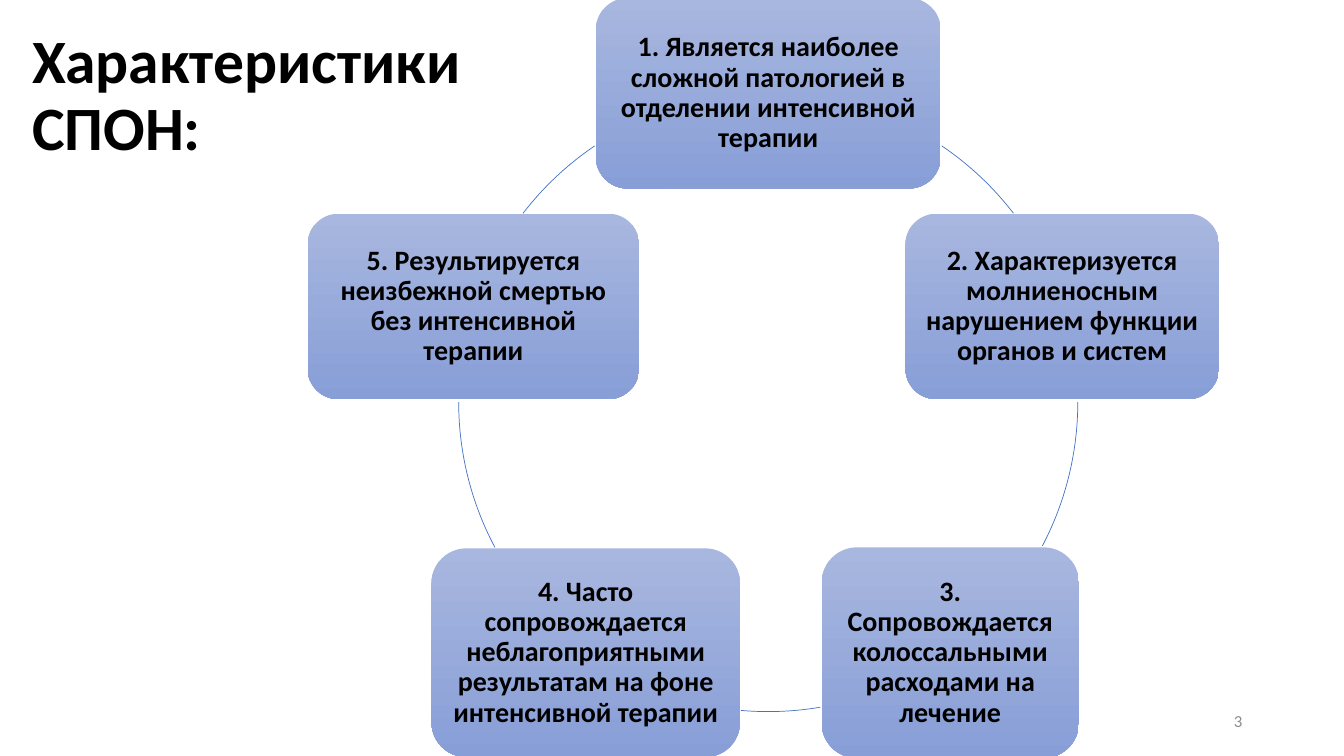
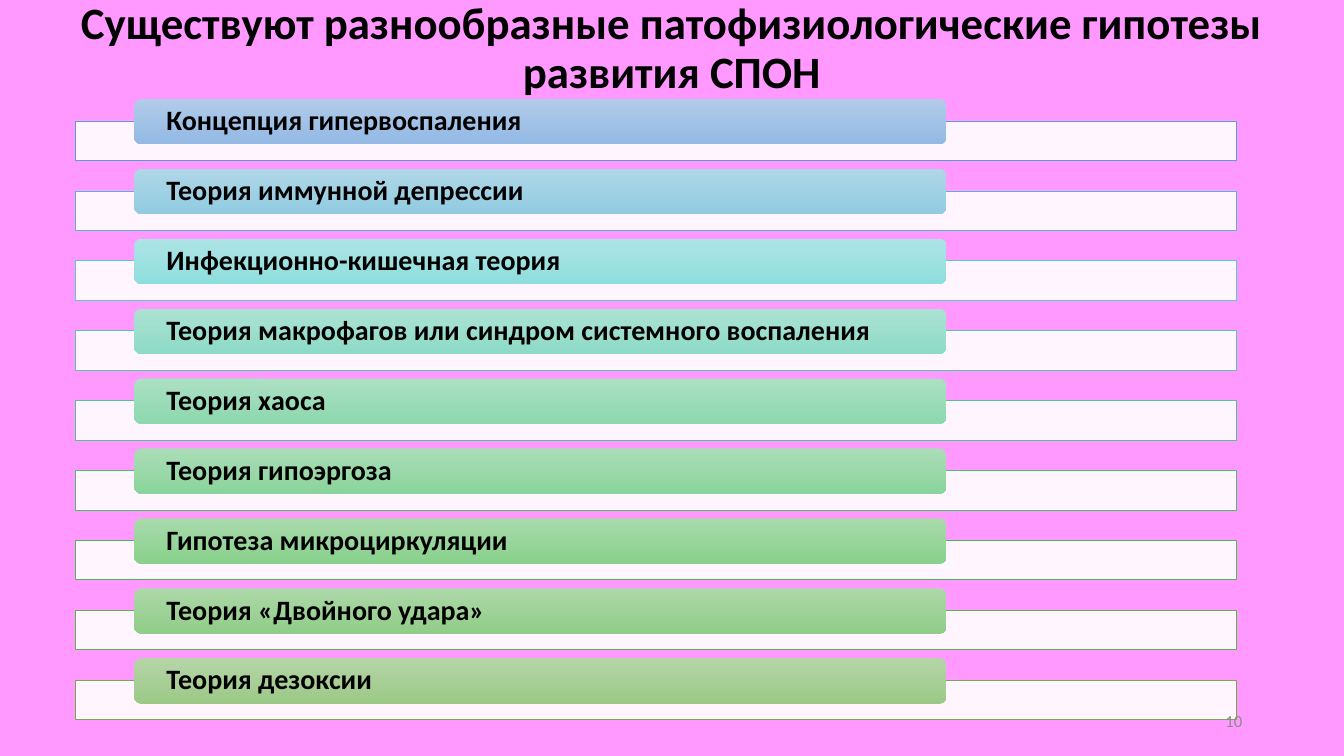
import pptx
import pptx.dml.color
import pptx.enum.shapes
import pptx.enum.text
import pptx.oxml
import pptx.oxml.ns
import pptx.util

Inches = pptx.util.Inches
Color = pptx.dml.color.RGBColor
Shape = pptx.enum.shapes.MSO_SHAPE
Align = pptx.enum.text.PP_ALIGN

# Shared style
FONT = "Calibri"
BLACK = Color(0x00, 0x00, 0x00)
WHITE = Color(0xFF, 0xFF, 0xFF)
GRAY = Color(0x8C, 0x8C, 0x8C)
PINK = Color(0xFF, 0x99, 0xFF)
BLUE_LINE = Color(0x44, 0x72, 0xC4)
BLUE_TOP = Color(0xA8, 0xB7, 0xDF)
BLUE_BOTTOM = Color(0x88, 0x9E, 0xD7)

# Cycle: left, top, width, height, text
CYCLE_BOXES = [
    (5.91, -0.02, 3.42, 1.89, "1. Является наиболее сложной патологией в отделении интенсивной терапии"),
    (8.98, 2.12, 3.11, 1.84, "2. Характеризуется молниеносным нарушением функции органов и систем"),
    (8.15, 5.43, 2.55, 2.09, "3. Сопровождается колоссальными расходами на лечение"),
    (4.28, 5.44, 3.06, 2.07, "4. Часто сопровождается неблагоприятными результатам на фоне интенсивной терапии"),
    (3.05, 2.12, 3.29, 1.84, "5. Результируется неизбежной смертью без интенсивной терапии"),
]
# Visible parts of the ring, in degrees clockwise from the right
CYCLE_ARCS = [(304.1, 322.4), (0, 27.7), (80.3, 95), (152, 180), (217.6, 235.9)]

# Hypotheses: text, strip outline, bar gradient top and bottom
HYPOTHESES = [
    ("Концепция гипервоспаления", "5B9BD5", "B1CBE9", "93B9E4"),
    ("Теория иммунной депрессии", "57B4D1", "AFD7E7", "91CBE1"),
    ("Инфекционно-кишечная теория", "54CCCD", "AEE4E5", "8FDEDE"),
    ("Теория макрофагов или синдром системного воспаления", "51C9AD", "ACE2D3", "8DDBC6"),
    ("Теория хаоса", "4DC58D", "ABE0C3", "8CD8AF"),
    ("Теория гипоэргоза", "4AC06E", "AADDB6", "8AD49C"),
    ("Гипотеза микроциркуляции", "48BB4F", "A9DAAB", "89D18C"),
    ("Теория «Двойного удара»", "59B546", "ADD8A8", "90CD88"),
    ("Теория дезоксии", "70AD47", "B5D5A7", "9CC987"),
]
ROW_PITCH = 5.55 / (len(HYPOTHESES) - 1)


class Deck:
    def __init__(self):
        self.presentation = pptx.Presentation()
        self.presentation.slide_width = Inches(13.33)
        self.presentation.slide_height = Inches(7.5)
        self.slide = None

    def add_slide(self, background):
        self.slide = self.presentation.slides.add_slide(self.presentation.slide_layouts[6])
        self.slide.background.fill.solid()
        self.slide.background.fill.fore_color.rgb = background

    def set_text(self, shape, text, size, align, color=BLACK, bold=True, spacing=0.9):
        frame = shape.text_frame
        frame.word_wrap = True
        frame.vertical_anchor = pptx.enum.text.MSO_ANCHOR.MIDDLE
        frame.text = text
        paragraph = frame.paragraphs[0]
        paragraph.alignment = align
        paragraph.line_spacing = spacing
        paragraph.font.name = FONT
        paragraph.font.size = pptx.util.Pt(size)
        paragraph.font.bold = bold
        paragraph.font.color.rgb = color

    def text_box(self, box, text, size, align, **style):
        shape = self.slide.shapes.add_textbox(*map(Inches, box))
        self.set_text(shape, text, size, align, **style)

    def page_number(self, number):
        self.text_box((9.42, 6.95, 3, 0.4), str(number), 12, Align.RIGHT,
                      color=GRAY, bold=False, spacing=1.0)

    def shape(self, kind, box, line=None):
        shape = self.slide.shapes.add_shape(kind, *map(Inches, box))
        shape.shadow.inherit = False
        if line is None:
            shape.line.fill.background()
        else:
            shape.line.color.rgb = line
            shape.line.width = pptx.util.Pt(0.5)
        return shape

    def gradient_box(self, box, text, top, bottom, align, insets):
        shape = self.shape(Shape.ROUNDED_RECTANGLE, box)
        shape.fill.gradient()
        shape.fill.gradient_angle = 270
        for stop, color in zip(shape.fill.gradient_stops, (top, bottom)):
            stop.color.rgb = color
        side, edge = map(Inches, insets)
        frame = shape.text_frame
        frame.margin_left = frame.margin_right = side
        frame.margin_top = frame.margin_bottom = edge
        self.set_text(shape, text, 20, align)

    def arc(self, box, start, end):
        shape = self.shape(Shape.ARC, box, BLUE_LINE)
        shape.fill.background()
        # Arc angles are stored in 1/60000 degree, adjustments in 1/100000
        shape.adjustments[0] = start * 0.6
        shape.adjustments[1] = end * 0.6

    def strip(self, box, line):
        shape = self.shape(Shape.RECTANGLE, box, line)
        shape.fill.solid()
        shape.fill.fore_color.rgb = WHITE
        fill = shape.element.spPr.find(pptx.oxml.ns.qn("a:solidFill"))
        fill[0].append(pptx.oxml.parse_xml(
            f'<a:alpha {pptx.oxml.ns.nsdecls("a")} val="90000"/>'))


def main():
    deck = Deck()

    # Characteristics cycle
    deck.add_slide(WHITE)
    deck.text_box((0.22, 0, 6.03, 1.93), "Характеристики\vСПОН:", 44, Align.LEFT)
    for start, end in CYCLE_ARCS:
        deck.arc((4.55, 0.92, 6.14, 6.14), start, end)
    for *box, text in CYCLE_BOXES:
        deck.gradient_box(box, text, BLUE_TOP, BLUE_BOTTOM, Align.CENTER, (0.08, 0.08))
    deck.page_number(3)

    # List of hypotheses
    deck.add_slide(PINK)
    deck.text_box((0, 0, 13.33, 0.98),
                  "Существуют разнообразные патофизиологические гипотезы развития СПОН",
                  32, Align.CENTER)
    for row, (text, *colors) in enumerate(HYPOTHESES):
        line, top, bottom = map(Color.from_string, colors)
        offset = row * ROW_PITCH
        deck.strip((0.75, 1.2 + offset, 11.51, 0.39), line)
        deck.gradient_box((1.33, 0.98 + offset, 8.06, 0.45), text, top, bottom,
                          Align.LEFT, (0.3, 0))
    deck.page_number(10)

    deck.presentation.save("out.pptx")


if __name__ == "__main__":
    main()
